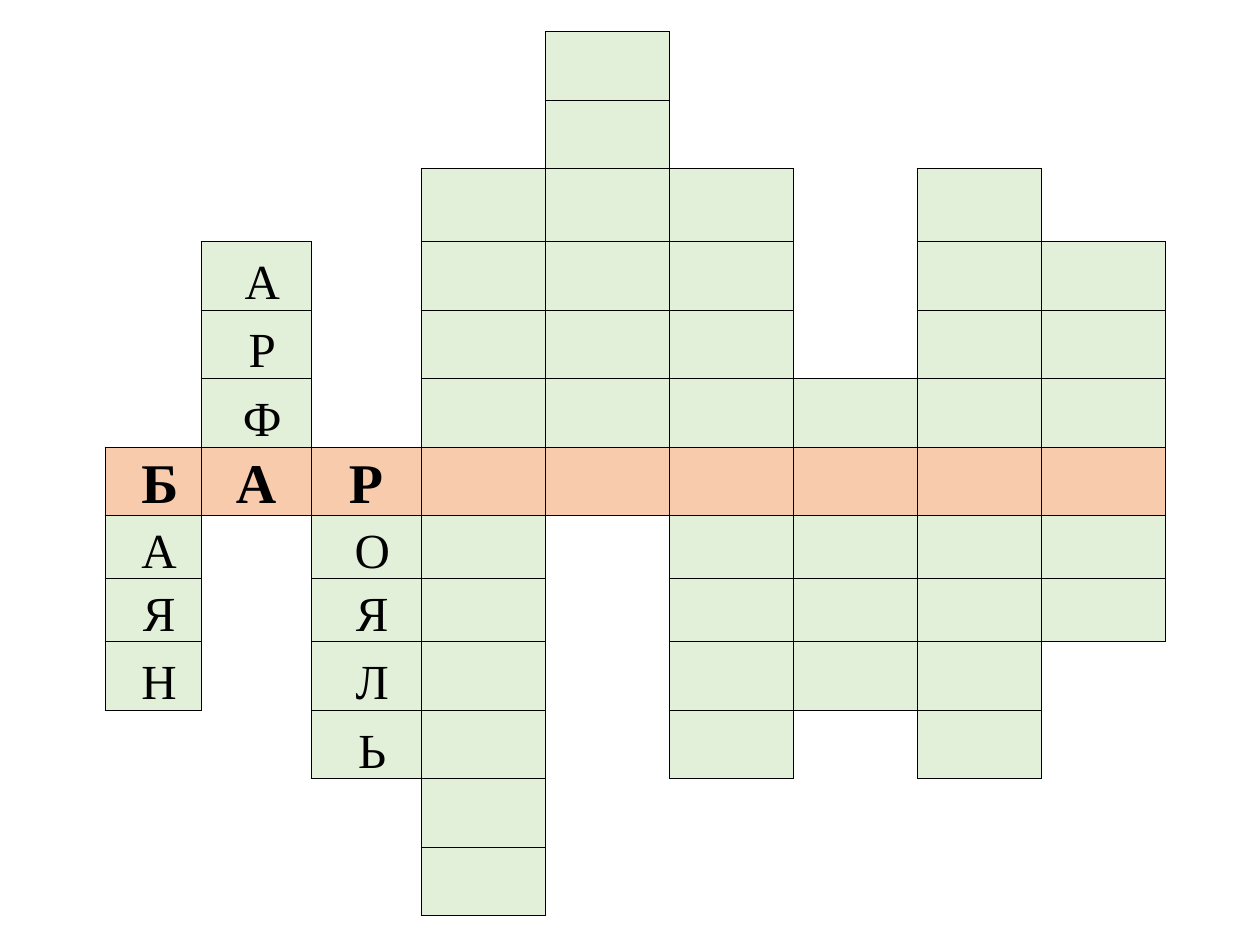
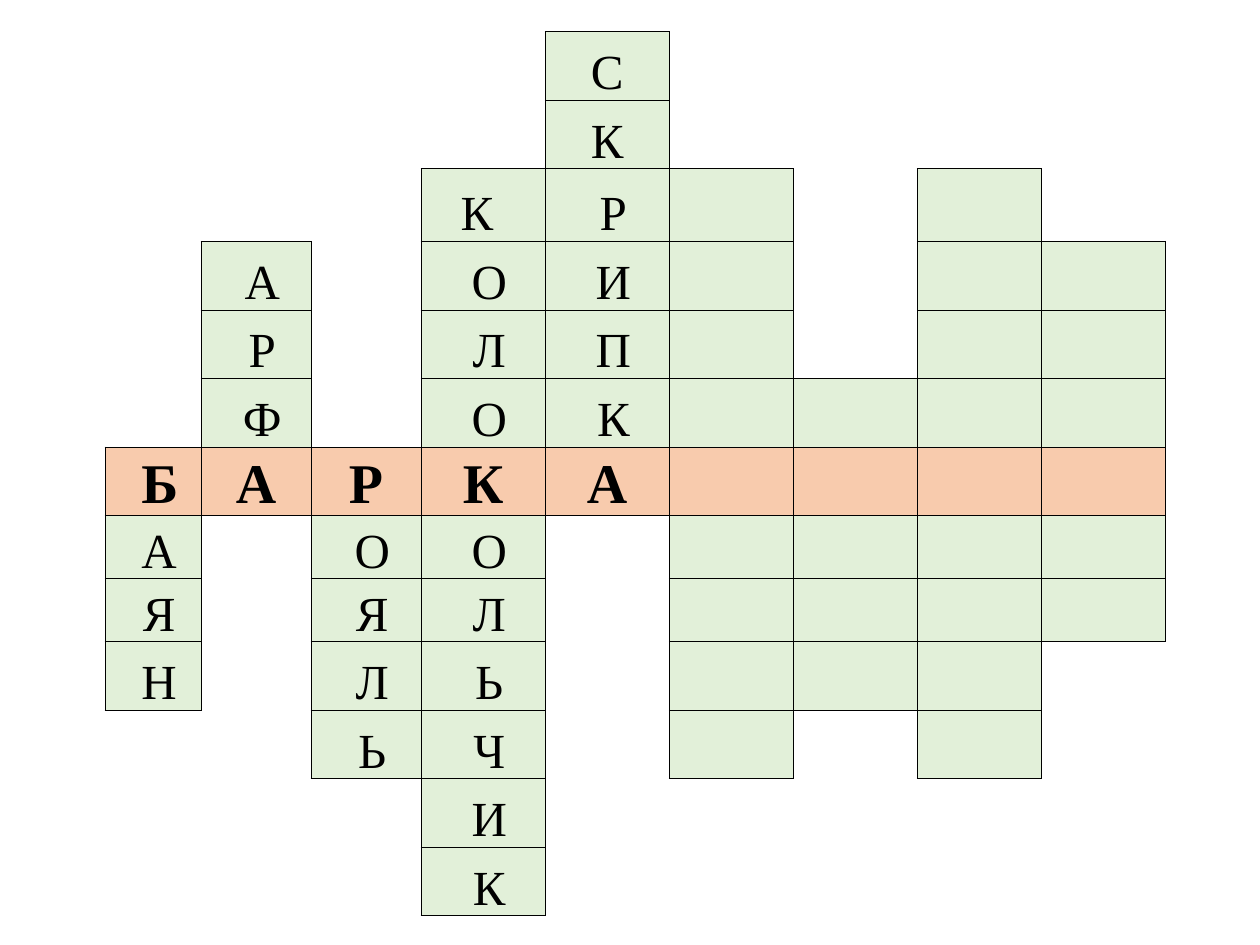
import itertools

import lxml.etree
import pptx
import pptx.dml.color
import pptx.enum.text
import pptx.oxml.ns
import pptx.util

FONT = "Times New Roman"
INK = "000000"
WORD_FILL = "E2F0D9"
KEY_FILL = "F8CBAD"
NO_STYLE = "{2D5ABB26-0587-4C30-8999-92F81FD0307C}"
NBSP = chr(160)

# Column widths and row heights in points
COLUMNS = [54.9] + [62.9] * 2 + [70.9] * 6
ROWS = [39.2] * 2 + [41.6] + [39.2] * 4 + [36] * 2 + [39.2] * 4
KEY_ROW = 6

# First row and length of the word in each column
WORDS = [(6, 4), (3, 4), (6, 5), (2, 11), (0, 7), (2, 9), (5, 5), (2, 9), (3, 6)]
ANSWERS = ["БАЯН", "АРФА", "РОЯЛЬ", "КОЛОКОЛЬЧИК", "СКРИПКА"]
FILLED = {(start + i, col) for col, (start, length) in enumerate(WORDS)
          for i in range(length)}

# Merged blank areas: top row, left column, bottom row, right column
MERGED = [(0, 1, 1, 3), (0, 5, 1, 8)]
SIDES = {"a:lnL": (0, -1), "a:lnR": (0, 1), "a:lnT": (-1, 0), "a:lnB": (1, 0)}


def color(hex_code):
    return pptx.dml.color.RGBColor.from_string(hex_code)


def padded(letter, row, col):
    """Add the no-break space that shifts most letters off the cell's centre."""
    if (row, col) == (2, 3):
        return letter + NBSP
    if (row == KEY_ROW and col > 0) or (col == 4 and row < 2):
        return letter
    return NBSP + letter


def block_of(row, col):
    """List the grid squares that the cell starting here covers."""
    for top, left, bottom, right in MERGED:
        if (row, col) == (top, left):
            return list(itertools.product(range(top, bottom + 1),
                                          range(left, right + 1)))
    return [(row, col)]


def set_borders(cell, row, col):
    """Rule every side that belongs to a word or touches one."""
    tc_pr = cell._tc.get_or_add_tcPr()
    qn = pptx.oxml.ns.qn
    for tag, (dr, dc) in SIDES.items():
        ruled = any(square in FILLED or (square[0] + dr, square[1] + dc) in FILLED
                    for square in block_of(row, col))
        ln = lxml.etree.SubElement(tc_pr, qn(tag), w=str(pptx.util.Pt(0.5)))
        if ruled:
            fill = lxml.etree.SubElement(ln, qn("a:solidFill"))
            lxml.etree.SubElement(fill, qn("a:srgbClr"), val=INK)
        else:
            lxml.etree.SubElement(ln, qn("a:noFill"))


def set_fill(cell, row, col):
    if (row, col) in FILLED:
        cell.fill.solid()
        cell.fill.fore_color.rgb = color(KEY_FILL if row == KEY_ROW else WORD_FILL)
    else:
        cell.fill.background()


def write_letter(cell, letter, row, col):
    cell.margin_left = cell.margin_right = cell.margin_top = pptx.util.Inches(0.01)
    cell.margin_bottom = 0
    cell.vertical_anchor = pptx.enum.text.MSO_ANCHOR.BOTTOM
    p = cell.text_frame.paragraphs[0]
    p.text = padded(letter, row, col)
    p.alignment = pptx.enum.text.PP_ALIGN.CENTER
    font = p.runs[0].font
    font.name = FONT
    font.size = pptx.util.Pt(32 if row == KEY_ROW else 28)
    font.bold = row == KEY_ROW
    font.color.rgb = color(INK)


def add_grid(prs, slide):
    frame = slide.shapes.add_table(
        len(ROWS), len(COLUMNS), int(prs.slide_width / 12), int(prs.slide_height / 30),
        pptx.util.Pt(sum(COLUMNS)), pptx.util.Pt(sum(ROWS)))
    table = frame.table
    table.first_row = table.horz_banding = False
    table._tbl.tblPr.find(pptx.oxml.ns.qn("a:tableStyleId")).text = NO_STYLE
    for column, width in zip(table.columns, COLUMNS):
        column.width = pptx.util.Pt(width)
    for row, height in zip(table.rows, ROWS):
        row.height = pptx.util.Pt(height)
    for top, left, bottom, right in MERGED:
        table.cell(top, left).merge(table.cell(bottom, right))
    return table


def add_crossword(prs, answers):
    slide = prs.slides.add_slide(prs.slide_layouts[6])
    table = add_grid(prs, slide)
    for row, col in itertools.product(range(len(ROWS)), range(len(COLUMNS))):
        cell = table.cell(row, col)
        set_borders(cell, row, col)
        set_fill(cell, row, col)
    for col, answer in enumerate(answers):
        for row, letter in enumerate(answer, WORDS[col][0]):
            write_letter(table.cell(row, col), letter, row, col)


def main():
    prs = pptx.Presentation()
    prs.slide_width = pptx.util.Inches(10)
    prs.slide_height = pptx.util.Inches(7.5)
    for solved in (3, 5):
        add_crossword(prs, ANSWERS[:solved])
    prs.save("out.pptx")


if __name__ == "__main__":
    main()
